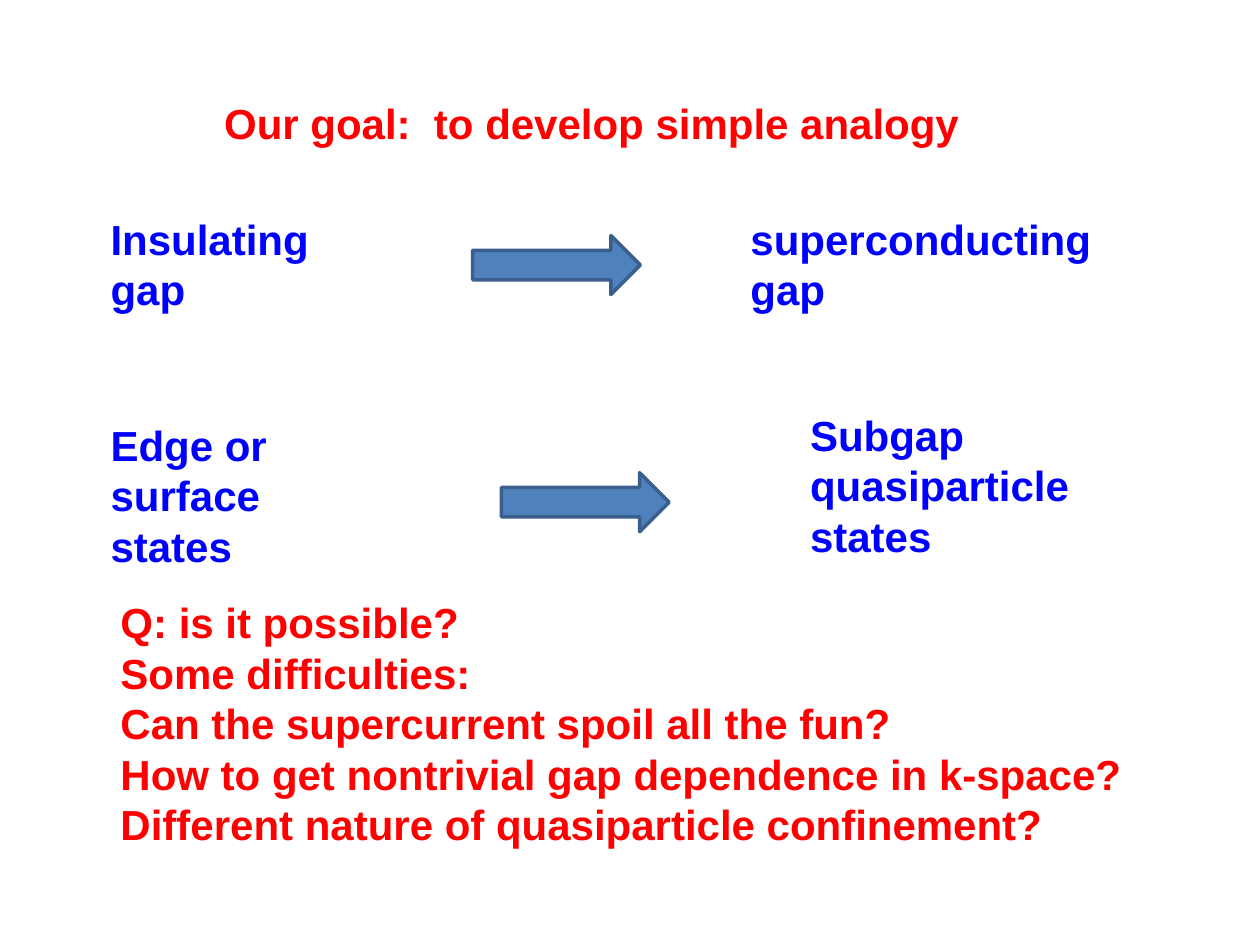
from dataclasses import dataclass

from pptx import Presentation
from pptx.dml.color import RGBColor
from pptx.enum.shapes import MSO_SHAPE
from pptx.enum.text import MSO_AUTO_SIZE
from pptx.slide import Slide
from pptx.util import Cm, Pt

RED = "FF0000"
BLUE = "0000FF"
FILL = "4F81BD"
EDGE = "3A5F8C"


@dataclass
class Label:
    left: float
    top: float
    width: float
    height: float
    lines: list[str]
    color: str = BLUE
    wrap: bool = True


@dataclass
class Arrow:
    left: float
    top: float
    width: float = 3.38
    height: float = 1.19


def rgb(code: str) -> RGBColor:
    return RGBColor.from_string(code)


def place(item: Label | Arrow) -> list[Cm]:
    return [Cm(n) for n in (item.left, item.top, item.width, item.height)]


def add_label(slide: Slide, label: Label) -> None:
    frame = slide.shapes.add_textbox(*place(label)).text_frame
    frame.word_wrap = label.wrap
    frame.auto_size = MSO_AUTO_SIZE.SHAPE_TO_FIT_TEXT
    for i, line in enumerate(label.lines):
        para = frame.add_paragraph() if i else frame.paragraphs[0]
        run = para.add_run()
        run.text = line
        run.font.name = "Arial"
        run.font.size = Pt(24)
        run.font.bold = True
        run.font.color.rgb = rgb(label.color)


def add_arrow(slide: Slide, arrow: Arrow) -> None:
    shape = slide.shapes.add_shape(MSO_SHAPE.RIGHT_ARROW, *place(arrow))
    shape.shadow.inherit = False
    shape.fill.solid()
    shape.fill.fore_color.rgb = rgb(FILL)
    shape.line.color.rgb = rgb(EDGE)
    shape.line.width = Pt(2)


# Title, then the two sides of the analogy
LABELS = [
    Label(4.27, 1.85, 15.47, 1.27,
          ["Our goal:  to develop simple analogy"], RED, False),
    Label(1.98, 4.17, 5.77, 2.31, ["Insulating gap"]),
    Label(1.98, 8.33, 4.57, 3.33, ["Edge or surface states"]),
    Label(14.88, 4.17, 8.13, 2.31, ["superconducting gap"]),
    Label(16.08, 8.13, 6.55, 3.33, ["Subgap quasiparticle states"]),
]
ARROWS = [Arrow(9.53, 4.75), Arrow(10.11, 9.53)]

# Open questions
DOUBTS = Label(2.18, 11.91, 21.11, 5.38, [
    "Q: is it possible?",
    "Some difficulties:",
    "Can the supercurrent spoil all the fun?",
    "How to get nontrivial gap dependence in k-space?",
    "Different nature of quasiparticle confinement?",
], RED, False)


def main() -> None:
    deck = Presentation()
    deck.slide_width = Cm(25.4)
    deck.slide_height = Cm(19.05)
    slide = deck.slides.add_slide(deck.slide_layouts[6])
    for label in LABELS:
        add_label(slide, label)
    for arrow in ARROWS:
        add_arrow(slide, arrow)
    add_label(slide, DOUBTS)
    deck.save("out.pptx")


if __name__ == "__main__":
    main()
